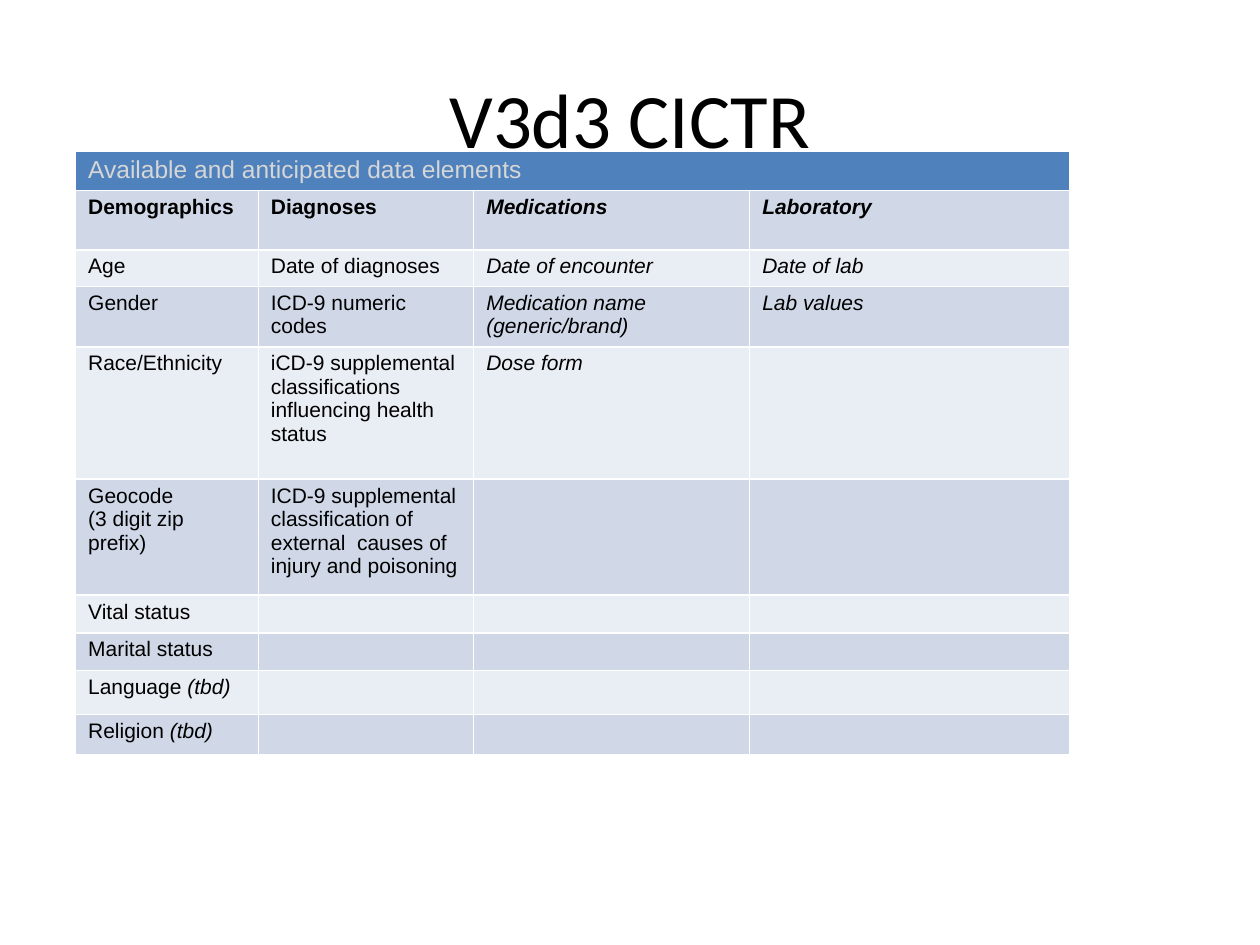
from lxml import etree
from pptx import Presentation
from pptx.dml.color import RGBColor
from pptx.enum.text import MSO_ANCHOR, PP_ALIGN
from pptx.oxml.ns import qn
from pptx.util import Inches, Pt

MIDDLE = MSO_ANCHOR.MIDDLE
CENTER = PP_ALIGN.CENTER

BLACK = RGBColor(0x00, 0x00, 0x00)
WHITE = RGBColor(0xFF, 0xFF, 0xFF)
GREY = RGBColor(0xD6, 0xD6, 0xD6)
BLUE = RGBColor(0x4F, 0x81, 0xBD)
BANDS = (RGBColor(0xE9, 0xED, 0xF4), RGBColor(0xD0, 0xD8, 0xE8))

# Widths and heights in inches
COLUMN_WIDTHS = (1.45, 1.71, 2.19, 2.54)
ROW_HEIGHTS = (0.31, 0.47, 0.29, 0.47, 1.05, 0.92, 0.3, 0.3, 0.35, 0.32)

CAPTION = "Available and anticipated data elements"
HEADINGS = ("Demographics", "Diagnoses", "Medications", "Laboratory")
FIRST_ANTICIPATED = 2  # columns from here on are set in italics
TO_BE_DECIDED = "(tbd)"
ELEMENTS = (
    ("Age", "Date of diagnoses", "Date of encounter", "Date of lab"),
    ("Gender", "ICD-9 numeric codes", "Medication name\n(generic/brand)", "Lab values"),
    ("Race/Ethnicity",
     "iCD-9 supplemental classifications influencing health status", "Dose form", ""),
    ("Geocode\n(3 digit zip prefix)",
     "ICD-9 supplemental classification of external  causes of injury and poisoning",
     "", ""),
    ("Vital status", "", "", ""),
    ("Marital status", "", "", ""),
    ("Language (tbd)", "", "", ""),
    ("Religion (tbd)", "", "", ""),
)


class SlideBuilder:
    """Holds the style and the current slide."""

    title_font, body_font = "Calibri", "Arial"
    title_size, caption_size, body_size = 44, 14, 12
    cell_margin = Inches(0.04)

    def __init__(self, deck):
        self.width, self.height = deck.slide_width, deck.slide_height
        self.page = deck.slides.add_slide(deck.slide_layouts[6])
        self.page.background.fill.solid()
        self.page.background.fill.fore_color.rgb = WHITE

    def place(self, left, top, width, height):
        """Turn shares of the slide's size into lengths."""
        return (int(left * self.width), int(top * self.height),
                int(width * self.width), int(height * self.height))

    def style(self, span, name, size, color, bold=False, italic=False):
        font = span.font
        font.name, font.size, font.color.rgb = name, Pt(size), color
        font.bold, font.italic = bold, italic

    def title(self, text, *area):
        box = self.page.shapes.add_textbox(*self.place(*area))
        frame = box.text_frame
        frame.word_wrap = True
        frame.vertical_anchor = MIDDLE
        frame.text = text
        para = frame.paragraphs[0]
        para.alignment = CENTER
        self.style(para.runs[0], self.title_font, self.title_size, BLACK)

    def table(self, left, top, widths, heights):
        area = self.place(left, top, 0.79, 0.64)
        grid = self.page.shapes.add_table(len(heights), len(widths), *area).table
        for column, width in zip(grid.columns, widths):
            column.width = Inches(width)
        for row, height in zip(grid.rows, heights):
            row.height = Inches(height)
        return grid

    def borders(self, cell):
        properties = cell._tc.get_or_add_tcPr()
        for side in "LRTB":
            line = etree.SubElement(properties, qn(f"a:ln{side}"), w=str(Pt(1)))
            fill = etree.SubElement(line, qn("a:solidFill"))
            etree.SubElement(fill, qn("a:srgbClr"), val=str(WHITE))

    def cell(self, cell, text, fill, size=body_size, color=BLACK,
             bold=False, italic=False):
        self.borders(cell)
        cell.margin_top = cell.margin_bottom = self.cell_margin
        cell.fill.solid()
        cell.fill.fore_color.rgb = fill
        cell.text_frame.text = text
        for para in cell.text_frame.paragraphs:
            if not para.text:  # keeps empty rows low
                etree.SubElement(para._p, qn("a:endParaRPr"), sz=str(size * 100))
            elif para.text.endswith(TO_BE_DECIDED):
                para.text = para.text.removesuffix(TO_BE_DECIDED)
                para.add_run().text = TO_BE_DECIDED
            for span in para.runs:
                slanted = italic or span.text == TO_BE_DECIDED
                self.style(span, self.body_font, size, color, bold, slanted)


def main():
    deck = Presentation()
    deck.slide_width, deck.slide_height = Inches(10), Inches(7.5)
    builder = SlideBuilder(deck)

    builder.title("V3d3 CICTR", 0.05, 0.04, 0.9, 0.17)

    # Caption row across all columns
    grid = builder.table(0.06, 0.16, COLUMN_WIDTHS, ROW_HEIGHTS)
    grid.cell(0, 0).merge(grid.cell(0, len(HEADINGS) - 1))
    builder.cell(grid.cell(0, 0), CAPTION, BLUE, builder.caption_size, GREY)

    # Headings and data elements in alternating bands
    for row, texts in enumerate((HEADINGS, *ELEMENTS), start=1):
        for column, text in enumerate(texts):
            builder.cell(grid.cell(row, column), text, BANDS[row % 2],
                         bold=row == 1, italic=column >= FIRST_ANTICIPATED)

    deck.save("out.pptx")


if __name__ == "__main__":
    main()
